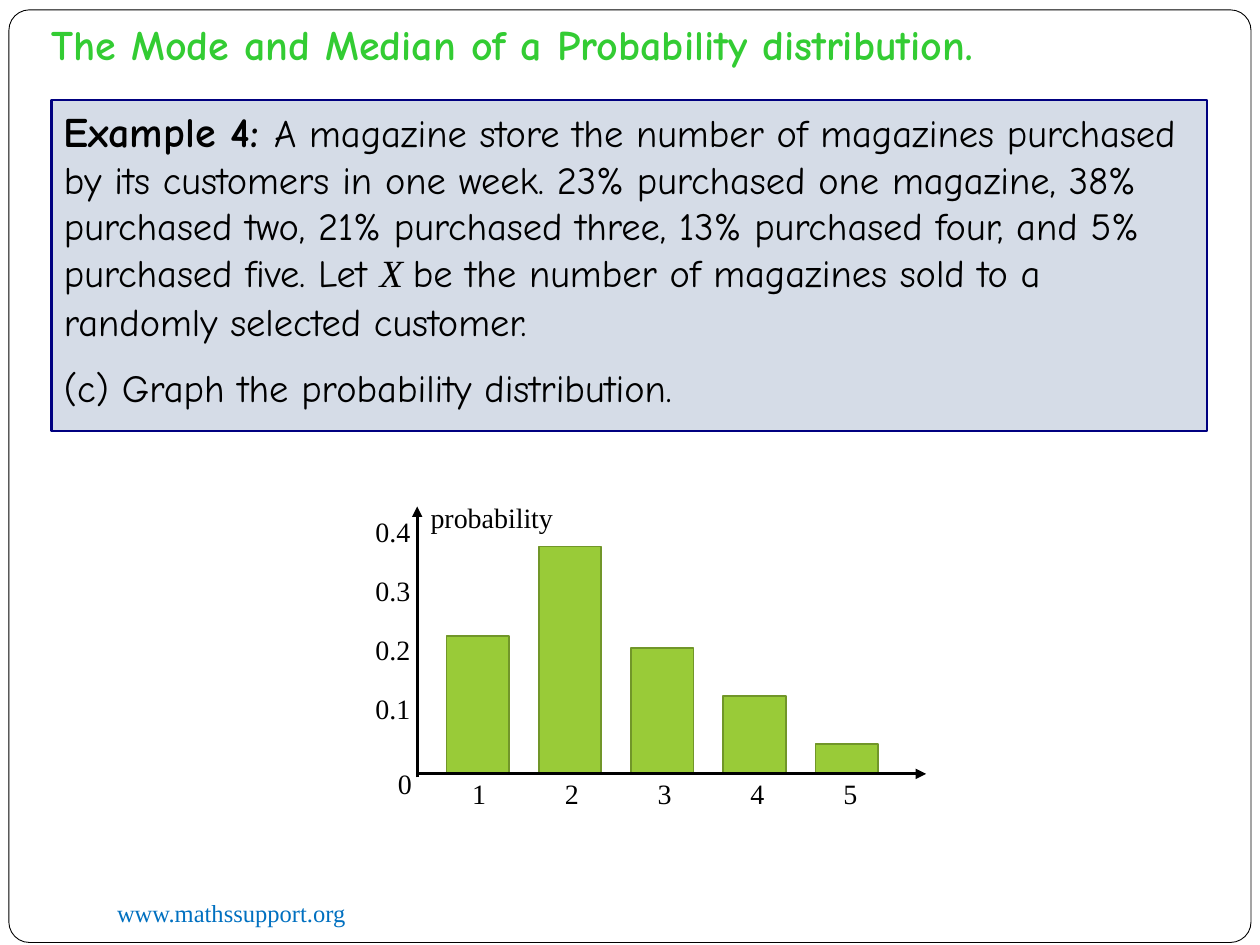
from lxml import etree
from pptx import Presentation
from pptx import util as u
from pptx.dml.color import RGBColor
from pptx.enum import shapes, text
from pptx.oxml.ns import qn

COLORS = {
    "white": "FFFFFF", "black": "000000", "title": "33CC33", "link": "0070C0",
    "panel": "D5DCE7", "navy": "000080", "bar": "99CB38", "bar_edge": "719629",
}
COMIC = "Comic Neue"
TIMES = "Times New Roman"
PROBABILITIES = [0.23, 0.38, 0.21, 0.13, 0.05]
BASELINE = 15.6
CM_PER_UNIT = 12.06


class SlideBuilder:
    """Draws styled elements on the current slide, with lengths in centimetres."""

    def __init__(self, slide):
        self.slide = slide

    def color(self, name):
        return RGBColor.from_string(COLORS[name])

    def box(self, left, top, width, height, fill, line, weight, kind="RECTANGLE"):
        shape = self.slide.shapes.add_shape(
            shapes.MSO_SHAPE[kind],
            u.Cm(left), u.Cm(top), u.Cm(width), u.Cm(height))
        shape.shadow.inherit = False
        shape.fill.solid()
        shape.fill.fore_color.rgb = self.color(fill)
        shape.line.color.rgb = self.color(line)
        shape.line.width = u.Pt(weight)
        return shape

    def add_paragraphs(self, frame, paragraphs, color="black", gap=0):
        frame.word_wrap = True
        frame.vertical_anchor = text.MSO_ANCHOR.TOP
        for index, runs in enumerate(paragraphs):
            paragraph = frame.add_paragraph() if index else frame.paragraphs[0]
            paragraph.alignment = text.PP_ALIGN.LEFT
            if index:
                paragraph.space_before = u.Pt(gap)
            for content, size, font, bold, italic in runs:
                run = paragraph.add_run()
                run.text = content
                run.font.size = u.Pt(size)
                run.font.name = font
                run.font.bold = bold
                run.font.italic = italic
                run.font.color.rgb = self.color(color)

    def label(self, content, left, top, width, height=0.94, size=16,
              font=TIMES, color="black", bold=False):
        shape = self.slide.shapes.add_textbox(
            u.Cm(left), u.Cm(top), u.Cm(width), u.Cm(height))
        self.add_paragraphs(
            shape.text_frame, [[(content, size, font, bold, False)]], color)

    def arrow(self, start_x, start_y, end_x, end_y):
        connector = self.slide.shapes.add_connector(
            shapes.MSO_CONNECTOR.STRAIGHT,
            u.Cm(start_x), u.Cm(start_y), u.Cm(end_x), u.Cm(end_y))
        connector.line.color.rgb = self.color("black")
        connector.line.width = u.Pt(1.75)
        properties = connector._element.spPr
        etree.SubElement(properties.find(qn("a:ln")), qn("a:tailEnd"), type="triangle")
        etree.SubElement(properties, qn("a:effectLst"))


def main():
    presentation = Presentation()
    presentation.slide_width = u.Cm(25.4)
    presentation.slide_height = u.Cm(19.05)
    builder = SlideBuilder(presentation.slides.add_slide(presentation.slide_layouts[6]))

    frame = builder.box(0.18, 0.2, 25.04, 18.8, "white", "black", 0.5, "ROUNDED_RECTANGLE")
    frame.adjustments[0] = 0.022
    builder.label("www.mathssupport.org", 2.11, 17.98, 8.26, 0.86, 14, color="link")
    builder.label("The Mode and Median of a Probability distribution.",
                  0.79, 0.25, 23.8, 1.27, 24, COMIC, "title", True)

    panel = builder.box(1.04, 2.01, 23.29, 6.68, "panel", "navy", 1.25)
    builder.add_paragraphs(panel.text_frame, [
        [
            ("Example 4: ", 24, COMIC, True, False),
            ("A magazine store the number of magazines purchased by its customers "
             "in one week. 23% purchased one magazine, 38% purchased two, 21% "
             "purchased three, 13% purchased four, and 5% purchased five. Let ",
             22, COMIC, False, False),
            ("X ", 22, TIMES, False, True),
            ("be the number of magazines sold to a randomly selected customer.",
             22, COMIC, False, False),
            (" ", 24, COMIC, False, False),
        ],
        [("(c) Graph the probability distribution.", 22, COMIC, False, False)],
    ], gap=11)

    builder.arrow(8.41, 15.67, 8.41, 10.21)
    builder.label("0", 7.77, 15.32, 0.61)
    for step in range(1, 5):
        builder.label(f"{step / 10}", 7.32, 15.01 - 1.19 * step, 1.42)
    for index, probability in enumerate(PROBABILITIES):
        height = probability * CM_PER_UNIT
        builder.box(9 + 1.86 * index, BASELINE - height, 1.26, height, "bar", "bar_edge", 1)
        builder.label(str(index + 1), 9.27 + 1.87 * index, 15.52, 0.61)
    builder.arrow(8.41, BASELINE, 18.67, BASELINE)
    builder.label("probability", 8.43, 9.96, 3.02)

    presentation.save("out.pptx")


if __name__ == "__main__":
    main()
